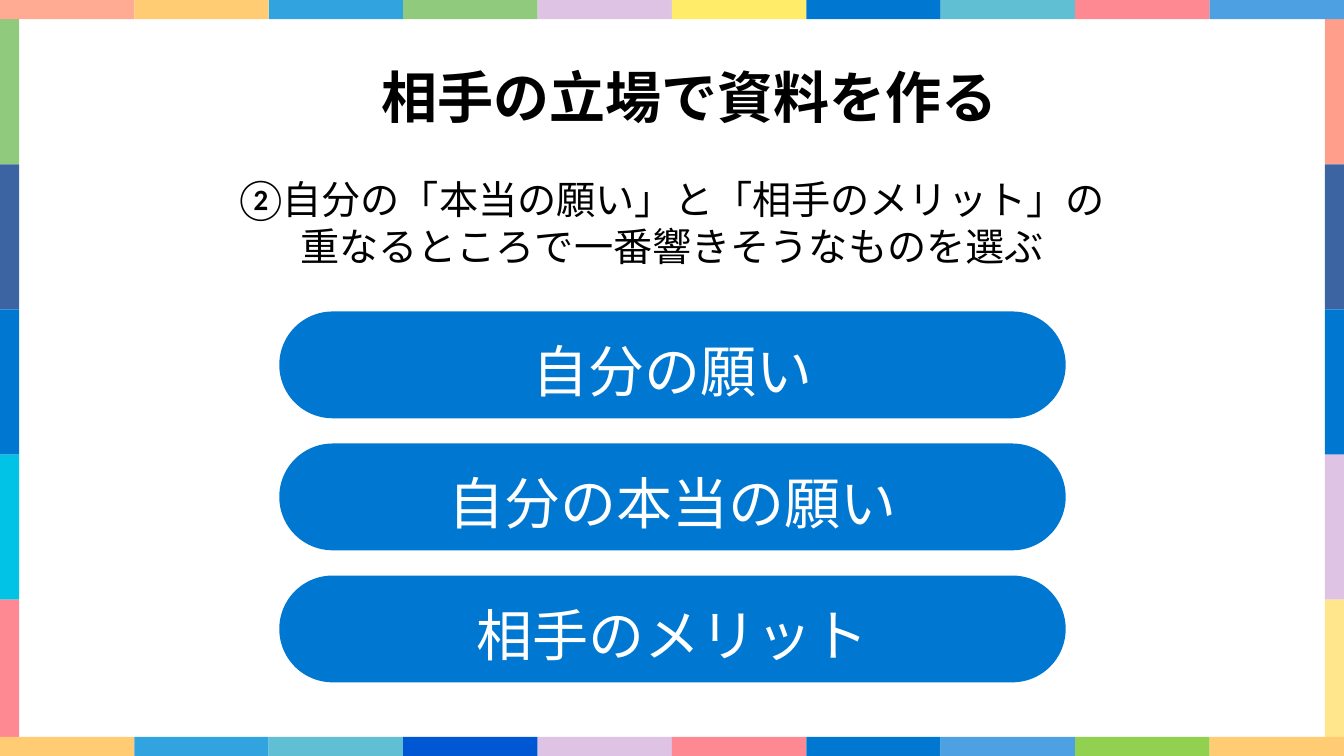
from pptx import Presentation
from pptx.dml.color import RGBColor
from pptx.enum import shapes, text
from pptx.oxml.ns import qn
from pptx.util import Inches, Pt
from lxml import etree

# Content
TITLE = "相手の立場で資料を作る"
LEAD = ["②自分の「本当の願い」と「相手のメリット」の",
        "重なるところで一番響きそうなものを選ぶ"]
CHOICES = ["自分の願い", "自分の本当の願い", "相手のメリット"]

# Border tiles: left to right, then top to bottom
TOP = ["FFAA93", "FFCB73", "31A4DF", "90CA7C", "DEC3E5",
       "FFEC68", "0078D2", "61BFD4", "FF8993", "4DA0E1"]
BOTTOM = ["FFCB73", "31A4DF", "61BFD4", "0057D3", "DEC3E5",
          "FF8993", "0078D2", "4DA0E1", "92D050", "FFCB73"]
LEFT = ["90CA7C", "3C64A3", "0078D2", "00C3E5", "FF8993"]
RIGHT = ["FF9E8B", "3C64A3", "0078D2", "DEC3E5", "FFE68C"]

BLACK = RGBColor(0, 0, 0)
WHITE = RGBColor(255, 255, 255)
BLUE = RGBColor(0x00, 0x78, 0xD2)
HEADING_FONT, TEXT_FONT = "Noto Sans CJK JP", "Lato"
WIDTH, HEIGHT, BORDER = 13.33, 7.5, 0.19
SIDE_TILE = 1.44
PILL_TOP, PILL_STEP = 3.09, 1.31


def place(part, left, top, width, height):
    part.left, part.top = Inches(left), Inches(top)
    part.width, part.height = Inches(width), Inches(height)


def add_block(kind, left, top, width, height, colour):
    block = slide.shapes.add_shape(kind, Inches(left), Inches(top),
                                   Inches(width), Inches(height))
    block.shadow.inherit = False
    block.fill.solid()
    block.fill.fore_color.rgb = colour
    block.line.fill.background()
    return block


def format_text(frame, font, size, colour, bold=False, inset_top=0.05):
    frame.word_wrap = True
    frame.margin_left = frame.margin_right = Inches(0.1)
    frame.margin_top, frame.margin_bottom = Inches(inset_top), Inches(0.05)
    for paragraph in frame.paragraphs:
        paragraph.alignment = text.PP_ALIGN.CENTER
        paragraph.space_before = Pt(0)
        for run in paragraph.runs:
            run.font.size, run.font.bold = Pt(size), bold
            run.font.color.rgb = colour
            run.font.name = font
            east_asian = etree.SubElement(run.font._element, qn("a:ea"))
            east_asian.set("typeface", font)


deck = Presentation()
deck.slide_width, deck.slide_height = Inches(WIDTH), Inches(HEIGHT)
slide = deck.slides.add_slide(deck.slide_layouts[1])

# Side borders, then top and bottom borders over their ends
for left, colours in [(0, LEFT), (WIDTH - BORDER, RIGHT)]:
    for row, colour in enumerate(colours):
        add_block(shapes.MSO_SHAPE.RECTANGLE, left, BORDER + row * SIDE_TILE,
                  BORDER, SIDE_TILE, RGBColor.from_string(colour))
for top, colours in [(0, TOP), (HEIGHT - BORDER, BOTTOM)]:
    tile = WIDTH / len(colours)
    for column, colour in enumerate(colours):
        add_block(shapes.MSO_SHAPE.RECTANGLE, column * tile, top,
                  tile, BORDER, RGBColor.from_string(colour))

# Title
title = slide.shapes.title
place(title, 2.02, 0.65, 9.64, 0.77)
title.text_frame.text = TITLE
title.text_frame.vertical_anchor = text.MSO_ANCHOR.TOP
title.text_frame.auto_size = text.MSO_AUTO_SIZE.SHAPE_TO_FIT_TEXT
title.text_frame.paragraphs[0].line_spacing = 0.9
format_text(title.text_frame, HEADING_FONT, 40, BLACK, bold=True)

# Lead text, without bullets
lead = slide.placeholders[1]
place(lead, 2.23, 1.51, 8.87, 1.33)
lead.text_frame.text = "\n".join(LEAD)
lead.text_frame.vertical_anchor = text.MSO_ANCHOR.MIDDLE
lead.text_frame.auto_size = text.MSO_AUTO_SIZE.NONE
for paragraph in lead.text_frame.paragraphs:
    properties = paragraph._p.get_or_add_pPr()
    properties.set("marL", "0")
    properties.set("indent", "0")
    etree.SubElement(properties, qn("a:buNone"))
format_text(lead.text_frame, TEXT_FONT, 28, BLACK, inset_top=0.12)

# Choices
for row, choice in enumerate(CHOICES):
    pill = add_block(shapes.MSO_SHAPE.ROUNDED_RECTANGLE, 2.77,
                     PILL_TOP + row * PILL_STEP, 7.8, 1.06, BLUE)
    pill.adjustments[0] = 0.5
    pill.text_frame.text = choice
    pill.text_frame.vertical_anchor = text.MSO_ANCHOR.MIDDLE
    format_text(pill.text_frame, TEXT_FONT, 40, WHITE, inset_top=0.16)

deck.save("out.pptx")
